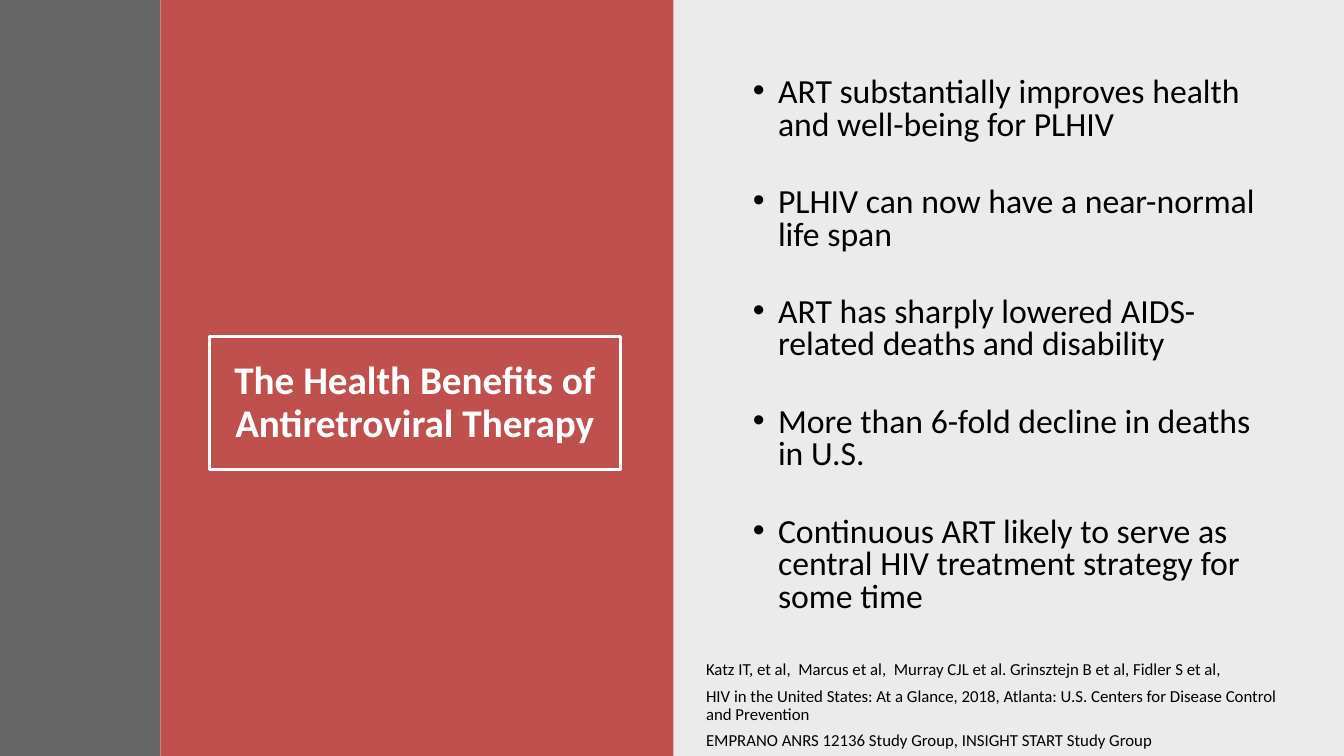
import pptx
import pptx.dml.color
import pptx.enum.shapes
import pptx.enum.text
import pptx.oxml.ns
import pptx.util
from lxml import etree

Pt = pptx.util.Pt
COLORS = {"red": "C0504D", "gray": "404040", "black": "000000", "white": "FFFFFF"}
FONT = "Calibri"
TITLE = "The Health Benefits of Antiretroviral Therapy"
BENEFITS = [
    "ART substantially improves health and well-being for PLHIV",
    "PLHIV can now have a near-normal life span",
    "ART has sharply lowered AIDS-related deaths and disability",
    "More than 6-fold decline in deaths in U.S.",
    "Continuous ART likely to serve as central HIV treatment strategy for some time",
]
REFERENCES = [
    "Katz IT, et al,  Marcus et al,  Murray CJL et al. Grinsztejn B et al, Fidler S et al,",
    "HIV in the United States: At a Glance, 2018, Atlanta: U.S. Centers for Disease Control and Prevention",
    "EMPRANO ANRS 12136 Study Group, INSIGHT START Study Group",
]


def rgb(name):
    """Return the named colour."""
    return pptx.dml.color.RGBColor.from_string(COLORS[name])


def add_panel(slide, box, color, opacity=100):
    """Fill the box with a plain panel of the given opacity in percent."""
    panel = slide.shapes.add_shape(
        pptx.enum.shapes.MSO_SHAPE.RECTANGLE, *map(Pt, box))
    panel.shadow.inherit = False
    panel.line.fill.background()
    panel.fill.solid()
    panel.fill.fore_color.rgb = rgb(color)
    if opacity < 100:
        tint = panel.fill._xPr.find(".//" + pptx.oxml.ns.qn("a:srgbClr"))
        etree.SubElement(tint, pptx.oxml.ns.qn("a:alpha"), val=str(opacity * 1000))


def write(paragraph, text, size, color, spacing, bold=False):
    """Write one run into the paragraph."""
    paragraph.line_spacing = spacing
    run = paragraph.add_run()
    run.text = text
    run.font.name = FONT
    run.font.size = Pt(size)
    run.font.bold = bold
    run.font.color.rgb = rgb(color)


def add_bullet(paragraph, left, hanging):
    """Give the paragraph a round bullet with a hanging indent."""
    properties = paragraph._p.get_or_add_pPr()
    properties.set("marL", str(Pt(left)))
    properties.set("indent", str(-Pt(hanging)))
    etree.SubElement(properties, pptx.oxml.ns.qn("a:buFont"), typeface="Arial")
    etree.SubElement(properties, pptx.oxml.ns.qn("a:buChar"), char="•")


def place_title(slide, box):
    """Place the framed title in front of the panels."""
    title = slide.shapes.title
    slide.shapes._spTree.append(title._element)
    title.left, title.top, title.width, title.height = map(Pt, box)
    title.line.color.rgb = rgb("white")
    title.line.width = Pt(2)
    frame = title.text_frame
    frame.word_wrap = True
    frame.auto_size = pptx.enum.text.MSO_AUTO_SIZE.NONE
    frame.vertical_anchor = pptx.enum.text.MSO_ANCHOR.MIDDLE
    heading = frame.paragraphs[0]
    heading.alignment = pptx.enum.text.PP_ALIGN.CENTER
    write(heading, TITLE, 28, "white", 0.9, bold=True)


def add_paragraphs(slide, box, texts, size, spacing):
    """Add a text box and return its paragraphs, one for each text."""
    frame = slide.shapes.add_textbox(*map(Pt, box)).text_frame
    frame.word_wrap = True
    for index, text in enumerate(texts):
        paragraph = frame.add_paragraph() if index else frame.paragraphs[0]
        write(paragraph, text, size, "black", spacing)
    return frame.paragraphs


def add_benefits(slide, box):
    """Add the bulleted list of benefits."""
    for index, benefit in enumerate(add_paragraphs(slide, box, BENEFITS, 24.1, 0.8)):
        benefit.space_before = Pt(32.3 if index else 4.8)
        add_bullet(benefit, 26.64, 18)


def add_references(slide, box):
    """Add the list of references."""
    for reference in add_paragraphs(slide, box, REFERENCES, 12, 0.9):
        reference.space_after = Pt(6)


def main():
    """Build and save the slide."""
    deck = pptx.Presentation()
    deck.slide_width, deck.slide_height = Pt(960), Pt(540)
    slide = deck.slides.add_slide(deck.slide_layouts[5])
    add_panel(slide, (480, 0, 480, 540), "black", 8)
    add_panel(slide, (114.5, 0, 366.5, 540), "red")
    place_title(slide, (149.5, 240.5, 293.5, 95))
    add_panel(slide, (0, 0, 114.5, 540), "gray", 80)
    add_benefits(slide, (522, 52, 398, 417))
    add_references(slide, (497.25, 468.75, 438.5, 71.25))
    deck.save("out.pptx")


if __name__ == "__main__":
    main()
